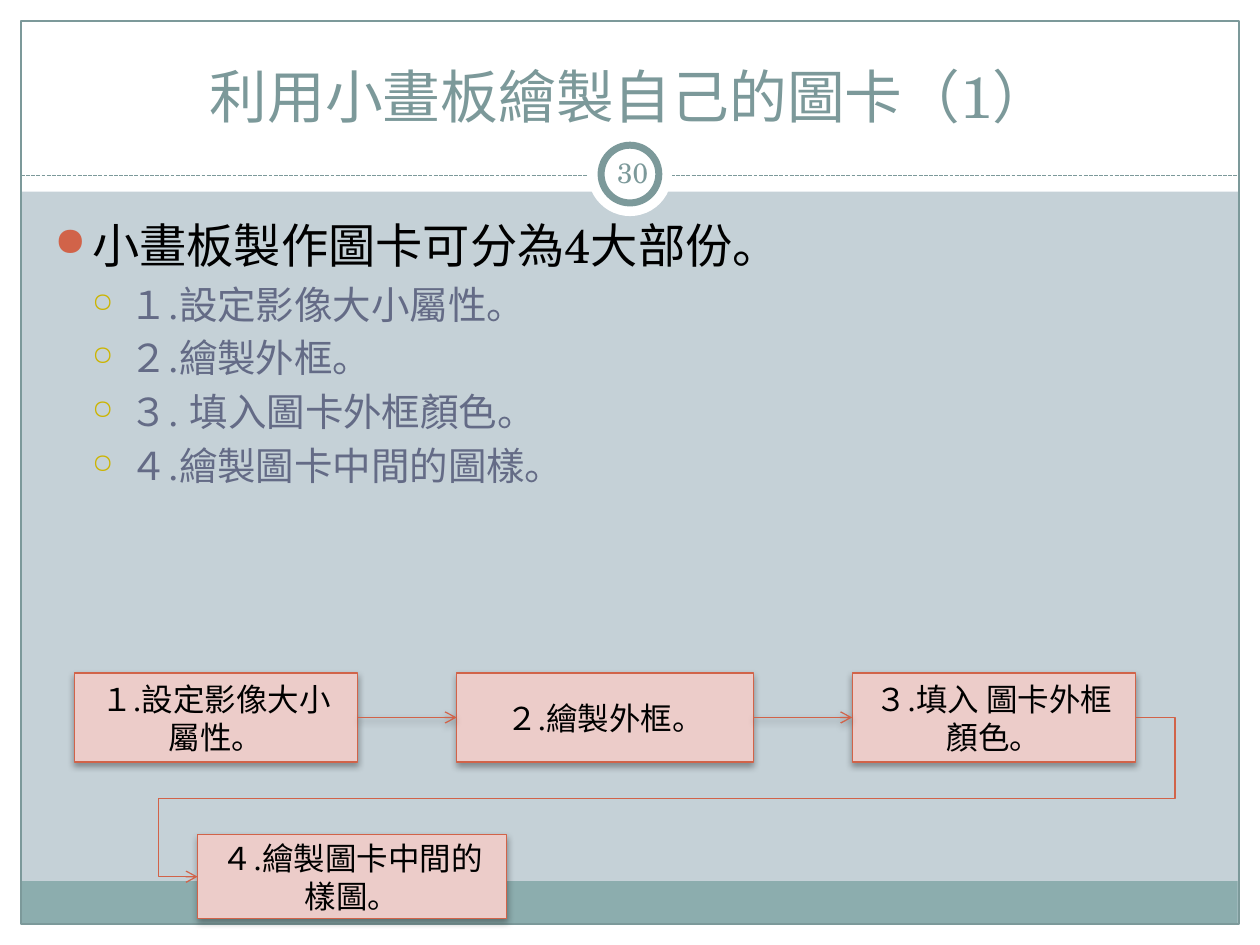
import lxml.etree
import pptx
import pptx.dml.color
import pptx.enum.dml
import pptx.enum.shapes
import pptx.enum.text
import pptx.oxml.ns
import pptx.util

Pt = pptx.util.Pt
SHAPES = pptx.enum.shapes.MSO_SHAPE
LINKS = pptx.enum.shapes.MSO_CONNECTOR
ALIGN = pptx.enum.text.PP_ALIGN
ANCHOR = pptx.enum.text.MSO_ANCHOR
DASH = pptx.enum.dml.MSO_LINE.SQUARE_DOT
WHITE, TEAL, RED, PINK, BLACK = "FFFFFF", "7C999A", "D16349", "ECCCC9", "000000"
LEFT_SIDE, RIGHT_SIDE = 1, 3


def colour(value):
    return pptx.dml.color.RGBColor.from_string(value)


def element(parent, tag, **attributes):
    return lxml.etree.SubElement(parent, pptx.oxml.ns.qn(tag), attributes)


class Painter:
    """Holds the style and the current page, and draws each kind of element."""

    font = "TeX Gyre Schola"

    def __init__(self, page):
        self.page = page

    def add_span(self, para, text, size, ink):
        span = para.add_run()
        span.text = text
        span.font.name = self.font
        span.font.size = Pt(size)
        span.font.color.rgb = colour(ink)

    def shadow(self, effects):
        outer = element(effects, "a:outerShdw", blurRad=str(Pt(4)), dist=str(Pt(2)),
                        dir="5400000", rotWithShape="0")
        black = element(outer, "a:srgbClr", val=BLACK)
        element(black, "a:alpha", val="35000")

    def shape(self, kind, left, top, width, height, fill=None, line=None, weight=0.75):
        box = self.page.shapes.add_shape(kind, Pt(left), Pt(top), Pt(width), Pt(height))
        box.shadow.inherit = False
        if fill:
            box.fill.solid()
            box.fill.fore_color.rgb = colour(fill)
        else:
            box.fill.background()
        if line:
            box.line.color.rgb = colour(line)
            box.line.width = Pt(weight)
        else:
            box.line.fill.background()
        return box

    def step(self, text, left, top, width, height):
        box = self.shape(SHAPES.RECTANGLE, left, top, width, height, PINK, RED)
        self.shadow(box._element.spPr.find(pptx.oxml.ns.qn("a:effectLst")))
        box.text_frame.word_wrap = True
        box.text_frame.vertical_anchor = ANCHOR.MIDDLE
        para = box.text_frame.paragraphs[0]
        para.alignment = ALIGN.CENTER
        self.add_span(para, text, 18, BLACK)
        return box

    def text_box(self, left, top, width, height, anchor=ANCHOR.TOP, inset=None):
        box = self.page.shapes.add_textbox(Pt(left), Pt(top), Pt(width), Pt(height))
        frame = box.text_frame
        frame.word_wrap = True
        frame.vertical_anchor = anchor
        if inset is not None:
            frame.margin_left = frame.margin_right = Pt(inset)
            frame.margin_top = frame.margin_bottom = Pt(inset)
        return frame

    def label(self, text, size, left, top, width, height, anchor, inset=None):
        para = self.text_box(left, top, width, height, anchor, inset).paragraphs[0]
        para.alignment = ALIGN.CENTER
        self.add_span(para, text, size, TEAL)

    def bullet(self, para, text, size, ink, mark, mark_ink, mark_size, level):
        para.level = level
        properties = para._p.get_or_add_pPr()
        properties.set("marL", str(Pt(21.6 * (level + 1))))
        properties.set("indent", str(Pt(-21.6)))
        element(element(properties, "a:buClr"), "a:srgbClr", val=mark_ink)
        element(properties, "a:buSzPct", val=str(mark_size * 1000))
        element(properties, "a:buChar", char=mark)
        self.add_span(para, text, size, ink)

    def connector(self, kind, start, end, ink):
        link = self.page.shapes.add_connector(kind, *start, *end)
        link.line.color.rgb = colour(ink)
        link.line.width = Pt(0.75)
        return link, element(link._element.spPr, "a:effectLst")

    def divider(self, left, right, height):
        link, _ = self.connector(LINKS.STRAIGHT, (Pt(left), Pt(height)), (Pt(right), Pt(height)), TEAL)
        link.line.dash_style = DASH

    def arrow(self, source, target, bends=None):
        start = source.left + source.width, source.top + source.height // 2
        end = target.left, target.top + target.height // 2
        link, effects = self.connector(LINKS.ELBOW if bends else LINKS.STRAIGHT, start, end, RED)
        link.begin_connect(source, RIGHT_SIDE)
        link.end_connect(target, LEFT_SIDE)
        element(link.line._get_or_add_ln(), "a:tailEnd", type="arrow")
        if bends:
            geometry = link._element.spPr.find(pptx.oxml.ns.qn("a:prstGeom"))
            geometry.set("prst", "bentConnector5")
            guides = geometry.find(pptx.oxml.ns.qn("a:avLst"))
            if guides is None:
                guides = element(geometry, "a:avLst")
            for number, bend in enumerate(bends, 1):
                element(guides, "a:gd", name=f"adj{number}", fmla=f"val {bend}")
        else:
            self.shadow(effects)


def main():
    deck = pptx.Presentation()
    deck.slide_width, deck.slide_height = Pt(720), Pt(540)
    page = deck.slides.add_slide(deck.slide_layouts[6])
    page.background.fill.solid()
    page.background.fill.fore_color.rgb = colour("C5D1D7")
    painter = Painter(page)

    margins = [(0, 528, 720, 12), (0, 0, 720, 109.5), (0, 0, 12, 540), (708, 0, 12, 540)]
    for margin in margins:
        painter.shape(SHAPES.RECTANGLE, *margin, fill=WHITE)
    painter.shape(SHAPES.RECTANGLE, 11.75, 503.5, 695.5, 24.5, fill="8CADAE")
    painter.shape(SHAPES.RECTANGLE, 12, 12, 696, 516, line=TEAL)
    painter.divider(12, 708, 100.5)
    painter.shape(SHAPES.OVAL, 336, 75.5, 48, 48, fill=WHITE)
    painter.shape(SHAPES.OVAL, 343.5, 83, 33, 33, WHITE, TEAL, 4)

    painter.label("利用小畫板繪製自己的圖卡（1）", 33, 24, 18, 672, 60, ANCHOR.BOTTOM)
    painter.label("30", 16, 343.5, 81, 36, 34.5, ANCHOR.MIDDLE, 3.6)

    frame = painter.text_box(24, 120, 670, 360)
    painter.bullet(frame.paragraphs[0], "小畫板製作圖卡可分為4大部份。", 27, BLACK, "●", RED, 85, 0)
    for text in ("１.設定影像大小屬性。", "２.繪製外框。",
                 "３. 填入圖卡外框顏色。", "４.繪製圖卡中間的圖樣。"):
        para = frame.add_paragraph()
        para.space_before = Pt(4.4)
        painter.bullet(para, text, 22, "646B86", "○", "CCB400", 70, 1)

    size = painter.step("１.設定影像大小屬性。", 42.5, 384.5, 162, 51)
    outline = painter.step("２.繪製外框。", 261, 384.5, 169.5, 51)
    filling = painter.step("３.填入 圖卡外框顏色。", 487, 384.5, 162, 51)
    pattern = painter.step("４.繪製圖卡中間的樣圖。", 113, 477, 176.5, 48)
    painter.arrow(size, outline)
    painter.arrow(outline, filling)
    painter.arrow(filling, pattern, bends=(-4200, 50800, 104200))

    deck.save("out.pptx")


if __name__ == "__main__":
    main()
